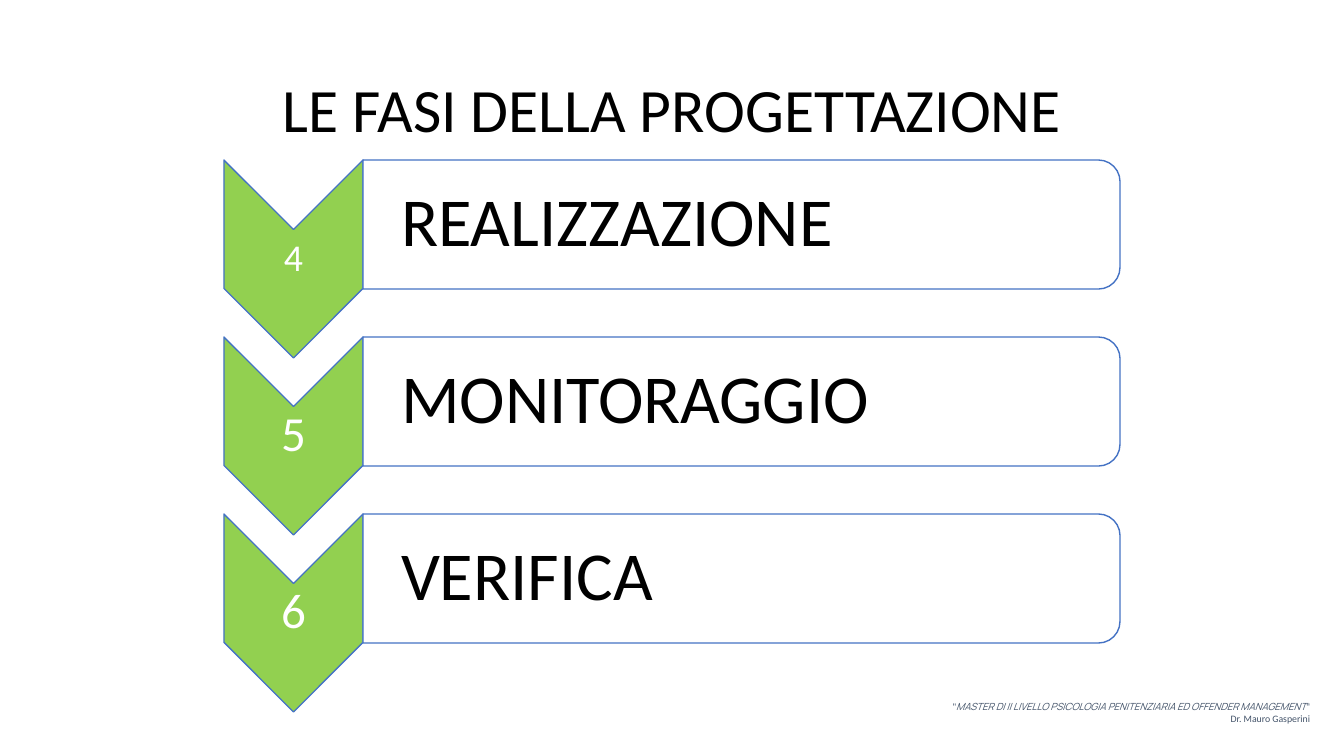
from pptx import Presentation
from pptx.dml.color import RGBColor
from pptx.enum.shapes import MSO_SHAPE
from pptx.enum.text import MSO_ANCHOR, PP_ALIGN
from pptx.oxml import parse_xml
from pptx.oxml.ns import nsdecls
from pptx.util import Emu, Pt

SCALE = 914400 / 100.8
BLACK = RGBColor(0, 0, 0)
WHITE = RGBColor(255, 255, 255)
GREEN = RGBColor(0x92, 0xD0, 0x50)
BLUE = RGBColor(0x44, 0x72, 0xC4)
SLATE = RGBColor(0x44, 0x54, 0x6A)
PHASES = [("4", 27, "REALIZZAZIONE"), ("5", 35, "MONITORAGGIO"), ("6", 35, "VERIFICA")]


def px(count):
    return Emu(round(count * SCALE))


def apply(target, values):
    for name, value in values.items():
        setattr(target, name, value)


def add_text(slide, box, lines, size, color, align, inset=(10, 5, 10, 5),
             anchor=MSO_ANCHOR.MIDDLE, spacing=0.9):
    frame = slide.shapes.add_textbox(*map(px, box)).text_frame
    left, top, right, bottom = map(px, inset)
    apply(frame, {"word_wrap": True, "vertical_anchor": anchor,
                  "margin_left": left, "margin_top": top,
                  "margin_right": right, "margin_bottom": bottom})
    for index, runs in enumerate(lines):
        para = frame.add_paragraph() if index else frame.paragraphs[0]
        apply(para, {"alignment": align, "line_spacing": spacing})
        for text, face, slant in runs:
            run = para.add_run()
            run.text = text
            apply(run.font, {"name": face, "size": Pt(size), "italic": slant})
            run.font.color.rgb = color


def add_turned(slide, kind, box, color):
    left, top, width, height = box
    shift = (width - height) / 2
    shape = slide.shapes.add_shape(
        kind, px(left + shift), px(top - shift), px(height), px(width))
    shape.rotation = 90
    shape.shadow.inherit = False
    shape.fill.solid()
    shape.fill.fore_color.rgb = color
    shape.line.color.rgb = BLUE
    shape.line.width = Pt(1)
    return shape


def add_phase(slide, box, number, size, label):
    left, top, width, height = box
    arrow = 139
    bar = (left + arrow, top, width - arrow, height)
    add_turned(slide, MSO_SHAPE.CHEVRON, (left, top, arrow, height + arrow // 2), GREEN)
    add_text(slide, (left, top + arrow // 2, arrow, 60), [[(number, "Calibri", False)]],
             size, WHITE, PP_ALIGN.CENTER, (2, 2, 2, 2))
    panel = add_turned(slide, MSO_SHAPE.ROUND_2_SAME_RECTANGLE, bar, WHITE)
    tint = panel.fill._xPr.solidFill[0]
    tint.append(parse_xml(f'<a:alpha {nsdecls("a")} val="90000"/>'))
    add_text(slide, bar, [[(label, "Calibri", False)]], 49, BLACK,
             PP_ALIGN.LEFT, (38, 3, 3, 3))


def add_phases(slide, box):
    left, top, width, height = box
    for index, phase in enumerate(PHASES):
        add_phase(slide, (left, top + 177 * index, width, height), *phase)


def add_title(slide, box):
    add_text(slide, box, [[("LE FASI DELLA PROGETTAZIONE", "Calibri", False)]],
             44, BLACK, PP_ALIGN.CENTER)


def add_footer(slide, box):
    course = "MASTER DI II LIVELLO PSICOLOGIA PENITENZIARIA ED OFFENDER MANAGEMENT"
    lines = [[('"', "Calibri", False), (course, "Manrope", True), ('"', "Calibri", False)],
             [("Dr. Mauro Gasperini", "Calibri", False)]]
    add_text(slide, box, lines, 7, SLATE, PP_ALIGN.RIGHT,
             anchor=MSO_ANCHOR.TOP, spacing=1.0)


def main():
    deck = Presentation()
    apply(deck, {"slide_width": px(1344), "slide_height": px(756)})
    slide = deck.slides.add_slide(deck.slide_layouts[6])
    add_title(slide, (93, 40, 1159, 146))
    add_phases(slide, (224, 160, 896, 129))
    add_footer(slide, (79, 696, 1241, 35))
    deck.save("out.pptx")


if __name__ == "__main__":
    main()
